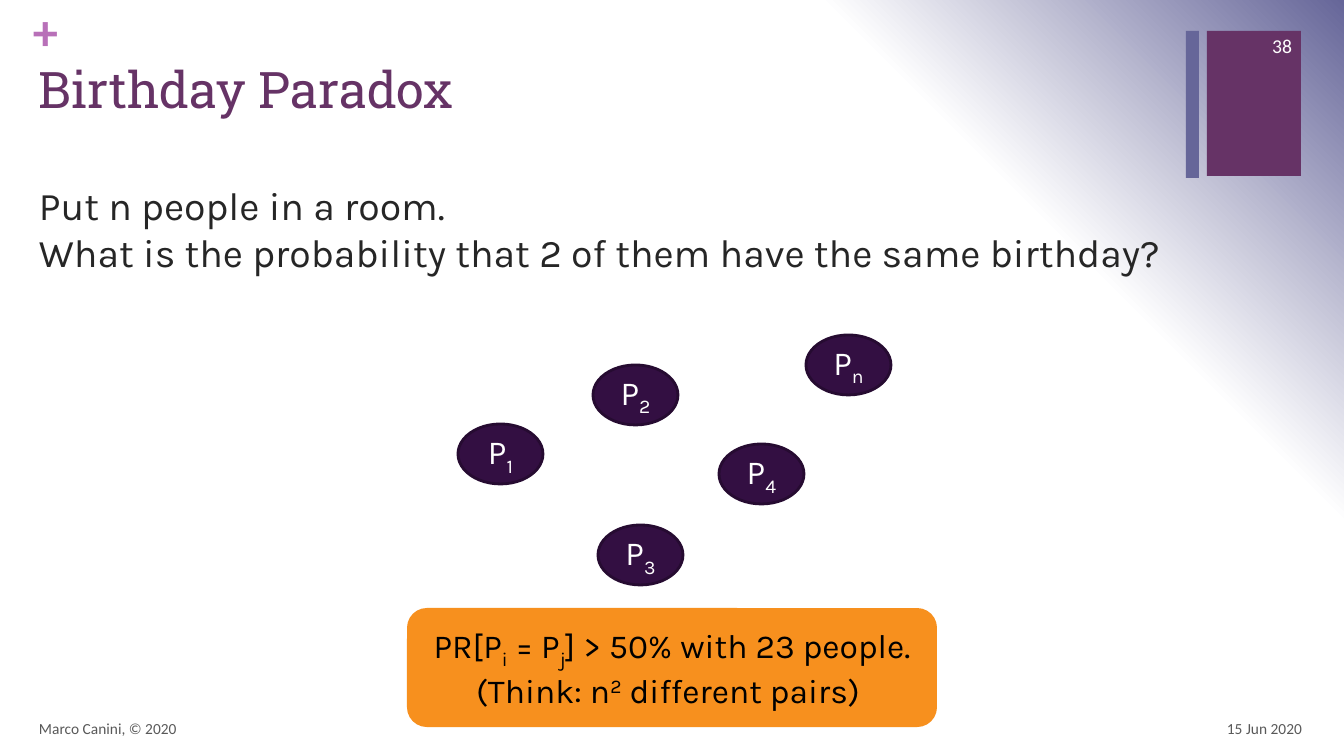
from pptx import Presentation
from pptx.dml.color import RGBColor
from pptx.enum.shapes import MSO_SHAPE
from pptx.enum.text import MSO_ANCHOR, PP_ALIGN
from pptx.oxml import parse_xml
from pptx.oxml.ns import nsdecls
from pptx.util import Pt

RECTANGLE, ELLIPSE, ROUNDED = MSO_SHAPE.RECTANGLE, MSO_SHAPE.OVAL, MSO_SHAPE.ROUNDED_RECTANGLE
TOP, MIDDLE = MSO_ANCHOR.TOP, MSO_ANCHOR.MIDDLE
LEFT, CENTER, RIGHT = PP_ALIGN.LEFT, PP_ALIGN.CENTER, PP_ALIGN.RIGHT

PLUM = RGBColor(0x66, 0x33, 0x66)
ORCHID = RGBColor(0xB8, 0x70, 0xB8)
SLATE = RGBColor(0x66, 0x66, 0x99)
INK = RGBColor(0x26, 0x26, 0x26)
GRAY = RGBColor(0x59, 0x59, 0x59)
AUBERGINE = RGBColor(0x33, 0x0F, 0x42)
AUBERGINE_EDGE = RGBColor(0x26, 0x0B, 0x31)
ORANGE = RGBColor(0xF7, 0x90, 0x1E)
WHITE = RGBColor(0xFF, 0xFF, 0xFF)
BLACK = RGBColor(0x00, 0x00, 0x00)

PX = 914400 / 100.8
SUBSCRIPT, SUPERSCRIPT = -25000, 30000


def add_block(kind, box, fill):
    shape = slide.shapes.add_shape(kind, *[round(length * PX) for length in box])
    shape.shadow.inherit = False
    shape.fill.solid()
    shape.fill.fore_color.rgb = fill
    shape.line.fill.background()
    return shape


def write(shape, lines, size, font, color, align=LEFT, anchor=TOP, inset=True, bold=False):
    frame = shape.text_frame
    frame.word_wrap = True
    frame.vertical_anchor = anchor
    if not inset:
        frame.margin_left = frame.margin_right = frame.margin_top = frame.margin_bottom = 0
    for index, runs in enumerate(lines):
        paragraph = frame.add_paragraph() if index else frame.paragraphs[0]
        paragraph.alignment = align
        paragraph.font.size = Pt(size)
        paragraph.font.name = font
        paragraph.font.bold = bold
        paragraph.font.color.rgb = color
        for text, baseline in runs:
            run = paragraph.add_run()
            run.text = text
            if baseline:
                run.font._element.set("baseline", str(baseline))


presentation = Presentation()
presentation.slide_width = round(1344 * PX)
presentation.slide_height = round(756 * PX)
slide = presentation.slides.add_slide(presentation.slide_layouts[6])

stops = "".join(
    f'<a:gs pos="{position}000"><a:srgbClr val="{color}"/></a:gs>'
    for position, color in [(0, WHITE), (75, WHITE), (100, SLATE)]
)
slide._element.cSld.insert(0, parse_xml(
    f'<p:bg {nsdecls("p", "a")}><p:bgPr><a:gradFill rotWithShape="1"><a:gsLst>{stops}</a:gsLst>'
    '<a:path path="circle"><a:fillToRect t="100000" r="100000"/></a:path>'
    '</a:gradFill><a:effectLst/></p:bgPr></p:bg>'
))

add_block(RECTANGLE, (1207, 31, 94, 145), PLUM)
add_block(RECTANGLE, (1186, 31, 13, 147), SLATE)

texts = [
    ("+", (33, 0, 38, 61), 36, "Calibri", ORCHID, LEFT, TOP, False, True),
    ("Birthday Paradox", (29, 53, 1154, 123), 36, "Roboto Slab", PLUM, LEFT, TOP, True, False),
    ("15 Jun 2020", (999, 708, 313, 40), 11, "Calibri", GRAY, RIGHT, MIDDLE, True, False),
    ("Marco Canini, © 2020", (29, 708, 900, 40), 11, "Calibri", GRAY, LEFT, MIDDLE, True, False),
    ("38", (1221, 26, 81, 40), 14, "Calibri", WHITE, RIGHT, MIDDLE, True, False),
]
for text, box, *style in texts:
    textbox = slide.shapes.add_textbox(*[round(length * PX) for length in box])
    write(textbox, [[(text, 0)]], *style)

question = slide.shapes.add_textbox(*[round(length * PX) for length in (29, 176, 1283, 531)])
question_lines = [
    [("Put n people in a room.", 0)],
    [("What is the probability that 2 of them have the same birthday?", 0)],
]
write(question, question_lines, 28, "Karla", INK)

people = [("1", 458, 424), ("2", 593, 365), ("3", 598, 525), ("4", 719, 444), ("n", 806, 335)]
for label, left, top in people:
    person = add_block(ELLIPSE, (left, top, 85, 60), AUBERGINE)
    person.line.color.rgb = AUBERGINE_EDGE
    person.line.width = Pt(2)
    write(person, [[("P", 0), (label, SUBSCRIPT)]], 24, "Karla", WHITE, CENTER, MIDDLE, False)

answer = add_block(ROUNDED, (407, 608, 530, 119), ORANGE)
answer_lines = [
    [("PR[P", 0), ("i", SUBSCRIPT), (" = P", 0), ("j", SUBSCRIPT), ("] > 50% with 23 people.", 0)],
    [("(Think: n", 0), ("2", SUPERSCRIPT), (" different pairs) ", 0)],
]
write(answer, answer_lines, 24, "Karla", BLACK, CENTER, MIDDLE, False)

presentation.save("out.pptx")
